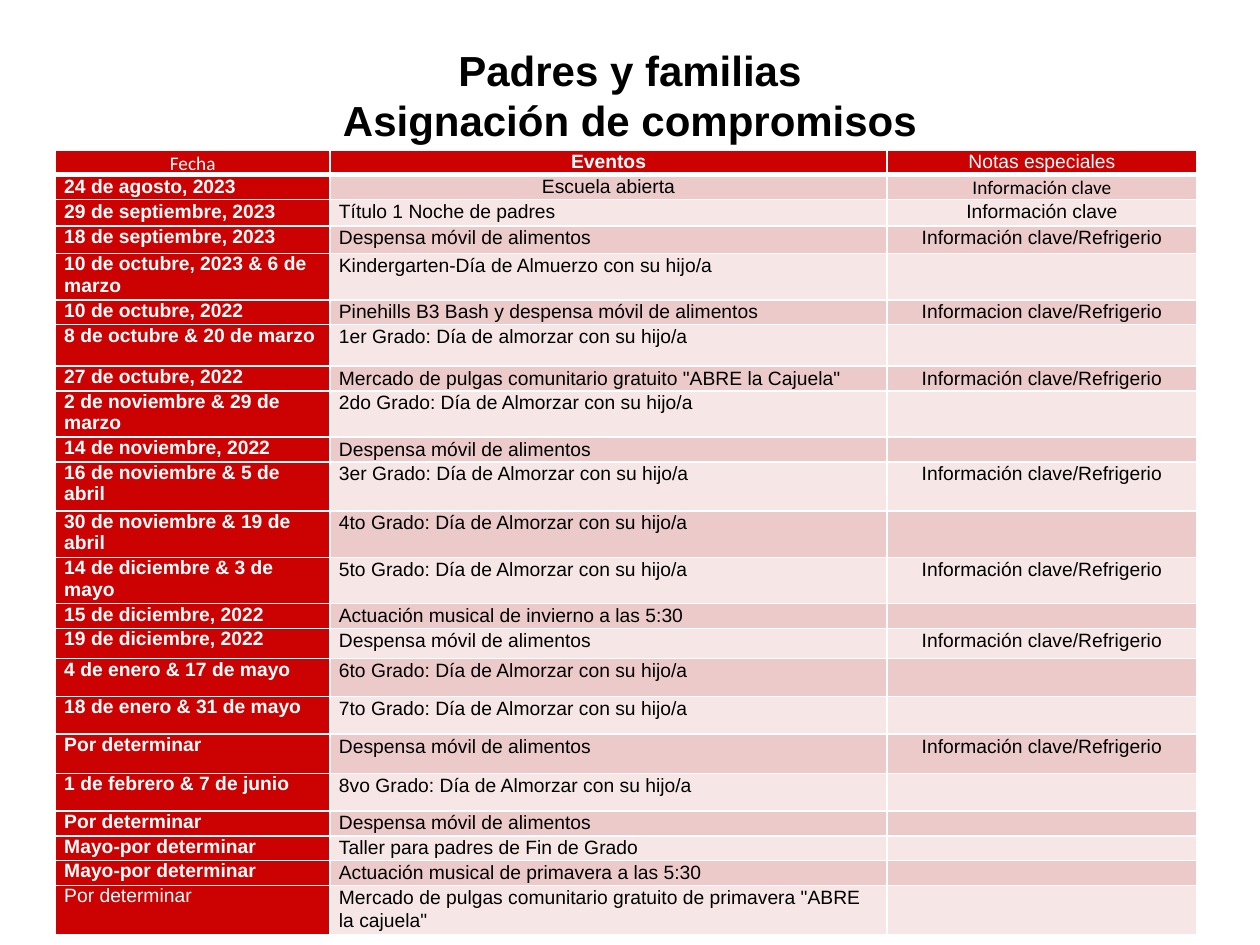
"""Build the slide with the yearly calendar of family events."""
from lxml import etree
from pptx import Presentation
from pptx import util as u
from pptx.dml.color import RGBColor
from pptx.enum import shapes, text
from pptx.oxml.ns import qn


def rgb(value):
    return RGBColor.from_string(value)


def border(cell, side, width):
    ln = etree.SubElement(cell._tc.get_or_add_tcPr(), qn("a:" + side), w=str(u.Pt(width)))
    fill = etree.SubElement(ln, qn("a:solidFill"))
    etree.SubElement(fill, qn("a:srgbClr"), val="FFFFFF")


PANTRY = "Despensa móvil de alimentos"
LUNCH = "Grado: Día de Almorzar con su hijo/a"
KEY = "Información clave"
SNACK = KEY + "/Refrigerio"
TBD = "Por determinar"

rows = [
    (0.18, "Fecha", "Eventos", "Notas especiales"),
    (0.18, "24 de agosto, 2023", "Escuela abierta", KEY),
    (0.21, "29 de septiembre, 2023", "Título 1 Noche de padres", KEY),
    (0.22, "18 de septiembre, 2023", PANTRY, SNACK),
    (0.33, "10 de octubre, 2023 & 6 de marzo", "Kindergarten-Día de Almuerzo con su hijo/a", ""),
    (0.18, "10 de octubre, 2022", "Pinehills B3 Bash y despensa móvil de alimentos", "Informacion clave/Refrigerio"),
    (0.33, "8 de octubre & 20 de marzo", "1er Grado: Día de almorzar con su hijo/a", ""),
    (0.18, "27 de octubre, 2022", 'Mercado de pulgas comunitario gratuito "ABRE la Cajuela"', SNACK),
    (0.33, "2 de noviembre & 29 de marzo", "2do " + LUNCH, ""),
    (0.18, "14 de noviembre, 2022", PANTRY, ""),
    (0.39, "16 de noviembre & 5 de abril", "3er " + LUNCH, SNACK),
    (0.33, "30 de noviembre & 19 de abril", "4to " + LUNCH, ""),
    (0.35, "14 de diciembre & 3 de mayo", "5to " + LUNCH, SNACK),
    (0.18, "15 de diciembre, 2022", "Actuación musical de invierno a las 5:30", ""),
    (0.24, "19 de diciembre, 2022", PANTRY, SNACK),
    (0.3, "4 de enero & 17 de mayo", "6to " + LUNCH, ""),
    (0.3, "18 de enero & 31 de mayo", "7to " + LUNCH, ""),
    (0.31, TBD, PANTRY, SNACK),
    (0.3, "1 de febrero & 7 de junio", "8vo " + LUNCH, ""),
    (0.18, TBD, PANTRY, ""),
    (0.18, "Mayo-por determinar", "Taller para padres de Fin de Grado", ""),
    (0.18, "Mayo-por determinar", "Actuación musical de primavera a las 5:30", ""),
    (0.35, TBD, 'Mercado de pulgas comunitario gratuito de primavera "ABRE la cajuela"', ""),
]
last = len(rows) - 1

prs = Presentation()
prs.slide_width, prs.slide_height = u.Inches(10), u.Inches(7.5)
s = prs.slides.add_slide(prs.slide_layouts[6])

rule = s.shapes.add_connector(
    shapes.MSO_CONNECTOR.STRAIGHT, u.Inches(0.5), u.Inches(7.32), u.Inches(9.5), u.Inches(7.32))
rule.line.color.rgb = rgb("CFD4D4")
rule.line.width = u.Pt(4)
etree.SubElement(rule._element.spPr, qn("a:effectLst"))

title = s.shapes.add_textbox(u.Inches(0.5), u.Inches(0.3), u.Inches(9), u.Inches(0.88))
tf = title.text_frame
tf.word_wrap = True
p = tf.paragraphs[0]
p.alignment = text.PP_ALIGN.CENTER
for i, line in enumerate(["Padres y familias", "Asignación de compromisos"]):
    if i:
        p.add_line_break()
    r = p.add_run()
    r.text = line
    r.font.name, r.font.size, r.font.bold = "Arial", u.Pt(24), True
    r.font.color.rgb = rgb("000000")

table = s.shapes.add_table(
    len(rows), 3, u.Inches(0.44), u.Inches(1.19), u.Inches(9.06), u.Inches(6.04)).table
for column, width in zip(table.columns, [2.18, 4.42, 2.46]):
    column.width = u.Inches(width)

for i, (height, *texts) in enumerate(rows):
    table.rows[i].height = u.Inches(height)
    for j, words in enumerate(texts):
        cell = table.cell(i, j)
        cell.margin_left = cell.margin_right = u.Inches(0.07)
        cell.margin_top = cell.margin_bottom = 0
        red = i == 0 or j == 0
        for side in ("lnL", "lnR", "lnT", "lnB"):
            border(cell, side, 3 if (i, side) in [(0, "lnB"), (1, "lnT")] else 1)
        cell.fill.solid()
        cell.fill.fore_color.rgb = rgb("CC0202" if red else "ECCACA" if i % 2 else "F6E6E6")
        p = cell.text_frame.paragraphs[0]
        if i == 0 or j == 2 or (i, j) == (1, 1):
            p.alignment = text.PP_ALIGN.CENTER
        if i < 3 or j:
            p.line_spacing = 1.07
        if not words:
            etree.SubElement(p._p, qn("a:endParaRPr"), sz="1100")
            continue
        r = p.add_run()
        r.text = words
        r.font.name = "Calibri" if (i, j) in [(0, 0), (1, 2)] else "Arial"
        r.font.size = u.Pt(11)
        r.font.bold = (i, j) == (0, 1) or (j == 0 and 0 < i < last)
        r.font.color.rgb = rgb("FFFFFF" if red else "000000")

prs.save("out.pptx")
